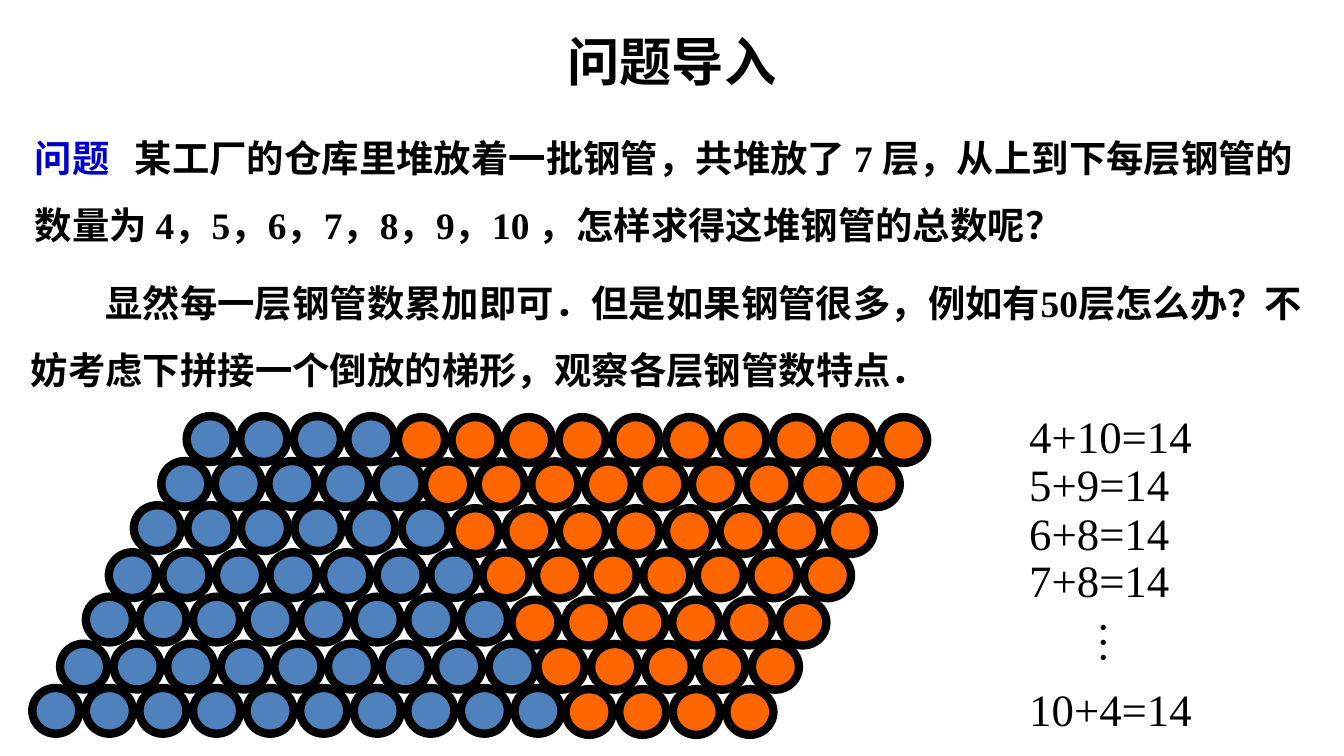
import pptx
import pptx.dml.color
import pptx.enum.shapes
import pptx.enum.text
import pptx.oxml
import pptx.oxml.ns
import pptx.util

Pt = pptx.util.Pt
BLACK = pptx.dml.color.RGBColor(0x00, 0x00, 0x00)
LABEL_BLUE = pptx.dml.color.RGBColor(0x00, 0x00, 0xCC)
PIPE_BLUE = pptx.dml.color.RGBColor(0x4F, 0x81, 0xBD)
PIPE_ORANGE = pptx.dml.color.RGBColor(0xFF, 0x66, 0x00)
CHINESE = "Noto Sans CJK SC"
LATIN = "Times New Roman"
CENTER = pptx.enum.text.PP_ALIGN.CENTER

deck = pptx.Presentation()
deck.slide_width = Pt(720)
deck.slide_height = Pt(405)
page = deck.slides.add_slide(deck.slide_layouts[6])


def add_box(left, top, width, height):
    box = page.shapes.add_textbox(Pt(left), Pt(top), Pt(width), Pt(height))
    box.text_frame.word_wrap = True
    return box


def style(para, size, name=LATIN, bold=False, chinese=False):
    para.font.size = Pt(size)
    para.font.bold = bold
    para.font.name = name
    para.font.color.rgb = BLACK
    if chinese:
        east = pptx.oxml.parse_xml(
            f'<a:ea {pptx.oxml.ns.nsdecls("a")} typeface="{CHINESE}"/>')
        para._p.pPr.find(pptx.oxml.ns.qn("a:defRPr")).append(east)


title = add_box(0, 10, 720, 45)
title.text_frame.vertical_anchor = pptx.enum.text.MSO_ANCHOR.MIDDLE
para = title.text_frame.paragraphs[0]
para.text = "问题导入"
para.alignment = CENTER
style(para, 28, CHINESE, True, True)

question = add_box(17.2, 57, 686, 75.6)
question.text_frame.margin_left = question.text_frame.margin_right = Pt(1.5)
para = question.text_frame.paragraphs[0]
para.line_spacing = 1.5
para._p.get_or_add_pPr().append(pptx.oxml.parse_xml(
    f'<a:tabLst {pptx.oxml.ns.nsdecls("a")}><a:tab pos="{Pt(53.5)}" algn="l"/></a:tabLst>'))
style(para, 20, bold=True, chinese=True)
span = para.add_run()
span.text = "问题"
span.font.color.rgb = LABEL_BLUE
span = para.add_run()
span.text = ("\t某工厂的仓库里堆放着一批钢管，共堆放了 7 层，从上到下每层钢管"
             "的数量为 4，5，6，7，8，9，10 ，怎样求得这堆钢管的总数呢？")

PITCH = 28.7
ROWS = [
    (4, 100, 223, 213.2, 223.5),
    (5, 86.4, 247, 227.2, 247.2),
    (6, 71.7, 270.7, 242, 272.3),
    (7, 58.3, 295.9, 258.5, 296),
    (8, 46, 319.7, 274, 321.3),
    (9, 32.2, 344.9, 288, 345),
    (10, 17.3, 368.6, 303, 369.2),
]
blue_pile = page.shapes.add_group_shape()
orange_pile = page.shapes.add_group_shape()
pipes = []
for count, left, top, _, _ in reversed(ROWS):
    for column in range(count):
        pipes.append((blue_pile, PIPE_BLUE, left + column * PITCH, top))
for count, _, _, left, top in ROWS:
    for column in reversed(range(14 - count)):
        pipes.append((orange_pile, PIPE_ORANGE, left + column * PITCH, top))
for pile, color, left, top in pipes:
    pipe = pile.shapes.add_shape(
        pptx.enum.shapes.MSO_SHAPE.OVAL, Pt(left), Pt(top), Pt(25.2), Pt(24.5))
    pipe.shadow.inherit = False
    pipe.fill.solid()
    pipe.fill.fore_color.rgb = color
    pipe.line.color.rgb = BLACK
    pipe.line.width = Pt(4.5)

idea = add_box(9.4, 134.6, 710, 75.6)
idea.text_frame.margin_right = 0
idea.text_frame.text = (
    "显然每一层钢管数累加即可．但是如果钢管很多，例如有50层怎么办？不\n"
    "妨考虑下拼接一个倒放的梯形，观察各层钢管数特点．")
idea.text_frame.paragraphs[0]._p.get_or_add_pPr().set("indent", str(Pt(40)))
for para in idea.text_frame.paragraphs:
    para.line_spacing = 1.5
    style(para, 20, bold=True, chinese=True)

for text, top in [("4+10=14", 215.3), ("5+9=14", 241.3), ("6+8=14", 267.5),
                  ("7+8=14", 292.6), ("10+4=14", 361.7)]:
    equation = add_box(544.3, top, 113, 36)
    para = equation.text_frame.paragraphs[0]
    para.text = text
    style(para, 24)

dots = add_box(543, 326.2, 113, 36)
dots.rotation = 90
para = dots.text_frame.paragraphs[0]
para.text = "…"
para.alignment = CENTER
style(para, 24)

deck.save("out.pptx")
